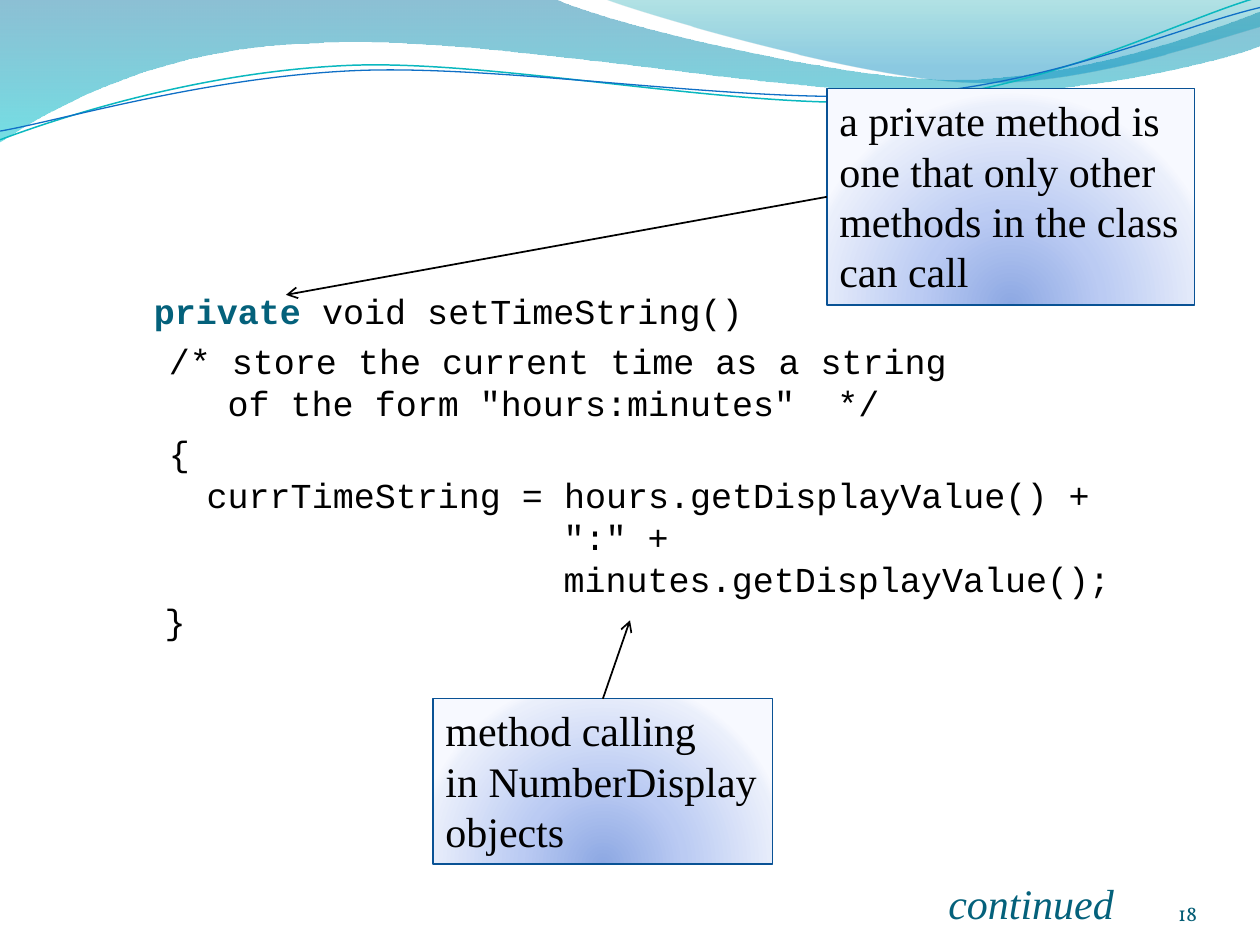
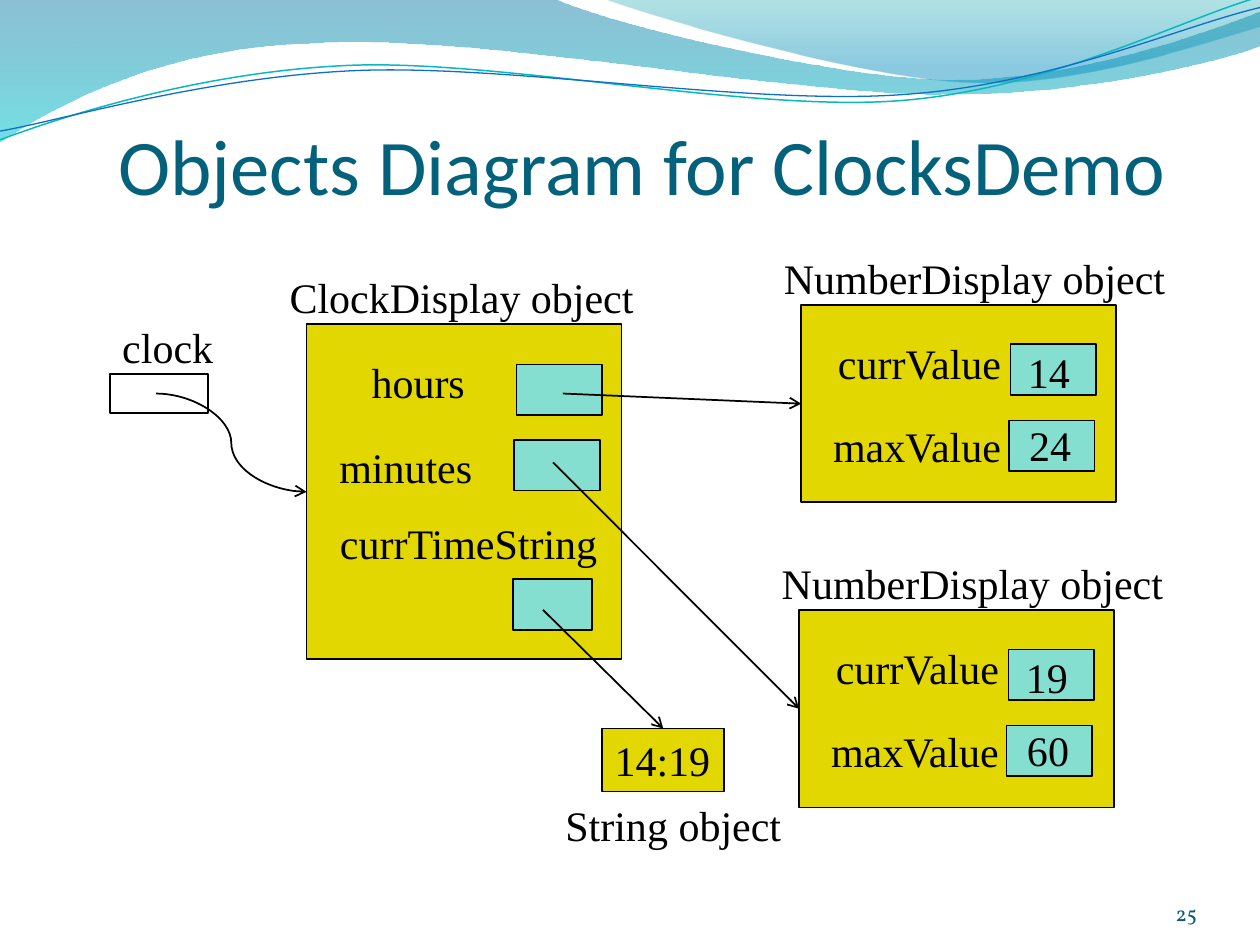
import dataclasses

import lxml.etree
import pptx
import pptx.dml.color
import pptx.enum.shapes
import pptx.enum.text
import pptx.oxml.ns
import pptx.util

Pt = pptx.util.Pt
qn = pptx.oxml.ns.qn
RECTANGLE = pptx.enum.shapes.MSO_SHAPE.RECTANGLE
CONNECTOR = pptx.enum.shapes.MSO_CONNECTOR
ANCHOR = pptx.enum.text.MSO_ANCHOR
ALIGN = pptx.enum.text.PP_ALIGN
TOP, LEFT = 0, 1


@dataclasses.dataclass(frozen=True)
class Theme:
    ink: str = "000000"
    accent: str = "04617B"
    number: str = "045D75"
    object_fill: str = "E2D700"
    field_fill: str = "85DFD0"
    callout_line: str = "095295"
    # gradient stops: position %, colour, opacity %
    callout_stops: tuple = ((0, "8DA8E3", 100), (43, "BBCBF3", 100),
                            (93, "EAEFFB", 100), (100, "F7F9FF", 100))
    wide_wave_stops: tuple = ((0, "0074A1", 45), (100, "00C6CF", 55))
    right_wave_stops: tuple = ((0, "00A1A9", 30), (80, "008BBF", 45))
    teal_line: str = "0AB8BF"
    blue_line: str = "0F6FC6"
    title_font: str = "Calibri"
    label_font: str = "Times New Roman"
    code_font: str = "Courier New"
    number_font: str = "Vollkorn"
    title_size: int = 45
    label_size: int = 24
    code_size: int = 20
    number_size: int = 12


THEME = Theme()
LABEL = {"name": THEME.label_font, "size": Pt(THEME.label_size)}
CODE = {"name": THEME.code_font, "size": Pt(THEME.code_size)}
TITLE = {"name": THEME.title_font, "size": Pt(THEME.title_size)}
NUMBER = {"name": THEME.number_font, "size": Pt(THEME.number_size)}

# Waves: a start point, then corners (x, y) and curves (two controls and an end).
WIDE_WAVE = [(0, 0), (316.8, -0.7), (342.7, 12.2, 478.1, 45.4, 545.8, 45.4),
             (614.2, 45.4, 689.8, 18.7, 720, 6.5), (720.7, 25.9),
             (707.8, 31.7, 626.4, 54.7, 537.1, 54),
             (447.8, 54, 275, 20.2, 185, 24.5),
             (92.9, 25.9, 33.1, 59.8, -0.7, 81.4)]
RIGHT_WAVE = [(344.9, -0.7), (366.5, 7.9, 491, 44.6, 553.7, 46.8),
              (616.3, 49.7, 691.9, 23, 720, 15.1), (720, 0)]
TEAL_WAVE = [(0, 79.9), (34.6, 67, 113.8, 41, 199.4, 37.4),
             (284.4, 33.8, 427, 64.1, 513.4, 57.6),
             (599.8, 51.1, 675.4, 10.8, 718.6, -1.4)]
BLUE_WAVE = [(0, 74.9), (33.8, 69.1, 118.1, 43.9, 203.8, 40.3),
             (290.2, 36.7, 429.8, 60.5, 516.2, 54),
             (601.9, 48.2, 673.9, 15.1, 720, 4.3)]


def rgb(colour):
    return pptx.dml.color.RGBColor.from_string(colour)


def set_values(target, values):
    for name, value in values.items():
        setattr(target, name, value)


def set_paint(shape, fill=None, line=None, width=1):
    shape.shadow.inherit = False
    if fill:
        shape.fill.solid()
        shape.fill.fore_color.rgb = rgb(fill)
    else:
        shape.fill.background()
    if line:
        shape.line.color.rgb = rgb(line)
        shape.line.width = Pt(width)
    else:
        shape.line.fill.background()


def set_gradient(shape, stops, radial=False):
    """Replace an empty fill by a downward or a radial gradient."""
    properties = shape._element.spPr
    gradient = lxml.etree.Element(qn("a:gradFill"), rotWithShape="1")
    stop_list = lxml.etree.SubElement(gradient, qn("a:gsLst"))
    for position, colour, opacity in stops:
        stop = lxml.etree.SubElement(stop_list, qn("a:gs"), pos=str(position * 1000))
        value = lxml.etree.SubElement(stop, qn("a:srgbClr"), val=colour)
        if opacity < 100:
            lxml.etree.SubElement(value, qn("a:alpha"), val=str(opacity * 1000))
    if radial:
        focus = lxml.etree.SubElement(gradient, qn("a:path"), path="circle")
        lxml.etree.SubElement(focus, qn("a:fillToRect"),
                              l="50000", t="130000", r="50000", b="-30000")
    else:
        lxml.etree.SubElement(gradient, qn("a:lin"), ang="5400000", scaled="0")
    properties.replace(properties.find(qn("a:noFill")), gradient)


def add_text(paragraph, text, font, colour=THEME.ink, **extra):
    """Add a run for each line of the text, with line breaks between."""
    for index, line in enumerate(text.split("\n")):
        if index:
            paragraph.add_line_break()
        run = paragraph.add_run()
        run.text = line
        set_values(run.font, {**font, **extra})
        run.font.color.rgb = rgb(colour)


def write_paragraphs(shape, texts, font=LABEL, colour=THEME.ink, align=ALIGN.LEFT,
                     frame_values=None, **extra):
    frame = shape.text_frame
    set_values(frame, {"word_wrap": False, "vertical_anchor": ANCHOR.TOP,
                       **(frame_values or {})})
    for index, text in enumerate(texts):
        paragraph = frame.add_paragraph() if index else frame.paragraphs[0]
        paragraph.alignment = align
        add_text(paragraph, text, font, colour, **extra)


def add_label(slide, left, top, width, text, height=36, **style):
    box = slide.shapes.add_textbox(Pt(left), Pt(top), Pt(width), Pt(height))
    write_paragraphs(box, [text], **style)


def add_box(slide, left, top, width, height, fill=None, line=THEME.ink, line_width=1):
    box = slide.shapes.add_shape(RECTANGLE, Pt(left), Pt(top), Pt(width), Pt(height))
    set_paint(box, fill, line, line_width)
    return box


def add_arrow(slide, start, end, kind=CONNECTOR.STRAIGHT):
    """Draw an arrow; each end is a point or a (shape, side) pair."""
    def is_point(target):
        return isinstance(target[0], (int, float))

    corners = [Pt(value) for target in (start, end)
               for value in (target if is_point(target) else (0, 0))]
    arrow = slide.shapes.add_connector(kind, *corners)
    if not is_point(start):
        arrow.begin_connect(*start)
    if not is_point(end):
        arrow.end_connect(*end)
    arrow.line.color.rgb = rgb(THEME.ink)
    arrow.line.width = Pt(1)
    properties = arrow._element.spPr
    lxml.etree.SubElement(properties.find(qn("a:ln")), qn("a:tailEnd"), type="arrow")
    lxml.etree.SubElement(properties, qn("a:effectLst"))


def bend_segments(shape, parts):
    """Turn the straight segments that have control points into Bézier curves."""
    segments = list(shape._element.iter(qn("a:lnTo")))
    for segment, part in zip(segments, parts):
        if len(part) == 2:
            continue
        curve = lxml.etree.Element(qn("a:cubicBezTo"))
        for x, y in zip(part[::2], part[1::2]):
            lxml.etree.SubElement(curve, qn("a:pt"), x=str(Pt(x) - shape.left),
                                  y=str(Pt(y) - shape.top))
        segment.getparent().replace(segment, curve)


def add_wave(slide, outline, stops=None, line=None, width=1):
    ends = [(Pt(part[-2]), Pt(part[-1])) for part in outline]
    builder = slide.shapes.build_freeform(*ends[0])
    builder.add_line_segments(ends[1:], close=bool(stops))
    wave = builder.convert_to_shape()
    bend_segments(wave, outline[1:])
    set_paint(wave, line=line, width=width)
    if stops:
        set_gradient(wave, stops)


def add_base_slide(presentation, number):
    """Add a slide with the wave band and the slide number."""
    slide = presentation.slides.add_slide(presentation.slide_layouts[6])
    add_wave(slide, WIDE_WAVE, THEME.wide_wave_stops)
    add_wave(slide, RIGHT_WAVE, THEME.right_wave_stops)
    add_wave(slide, TEAL_WAVE, line=THEME.teal_line, width=0.85)
    add_wave(slide, BLUE_WAVE, line=THEME.blue_line, width=0.75)
    margins = dict.fromkeys(
        ("margin_left", "margin_top", "margin_right", "margin_bottom"), 0)
    add_label(slide, 624, 500.2, 60, str(number), 28.8, font=NUMBER,
              colour=THEME.number, align=ALIGN.RIGHT,
              frame_values={**margins, "word_wrap": True,
                            "vertical_anchor": ANCHOR.BOTTOM})
    return slide


def add_code(slide, left, top, width, height):
    # left margin, first line indent, space before, text
    lines = [(15.4, 0, 0, "void setTimeString()"),
             (57.6, -33.6, 4.5, "/* store the current time as a string\n"
                                'of the form "hours:minutes"  */'),
             (24, 0, 4.5, "{"),
             (45.6, 0, 0, "currTimeString = hours.getDisplayValue() +"),
             (249.6, 0, 0, '":" +\nminutes.getDisplayValue();'),
             (21.6, 0, 0, "}")]
    frame = slide.shapes.add_textbox(Pt(left), Pt(top), Pt(width), Pt(height)).text_frame
    set_values(frame, {"word_wrap": True, "margin_top": Pt(9.3)})
    for index, (margin, indent, space, text) in enumerate(lines):
        paragraph = frame.add_paragraph() if index else frame.paragraphs[0]
        set_values(paragraph, {"space_before": Pt(space), "line_spacing": Pt(24)})
        properties = paragraph._p.get_or_add_pPr()
        properties.set("marL", str(Pt(margin)))
        properties.set("indent", str(Pt(indent)))
        if index == 0:
            add_text(paragraph, "private ", CODE, THEME.accent, bold=True)
        add_text(paragraph, text, CODE)


def add_callout(slide, left, top, width, height, texts, side, target):
    callout = add_box(slide, left, top, width, height,
                      line=THEME.callout_line, line_width=0.75)
    set_gradient(callout, THEME.callout_stops, radial=True)
    write_paragraphs(callout, texts)
    add_arrow(slide, (callout, side), target)


def add_object(slide, left, top, width, height, caption, fields):
    """Draw a captioned object; fields hold (kind, x, y, width, text) from its corner."""
    box = add_box(slide, left, top, width, height, THEME.object_fill)
    caption_text, caption_x, caption_width = caption
    add_label(slide, left + caption_x, top - 33.5, caption_width, caption_text)
    for kind, x, y, field_width, text in fields:
        if kind == "cell":
            add_box(slide, left + x, top + y, field_width, 28.8, THEME.field_fill)
        else:
            add_label(slide, left + x, top + y, field_width, text)
    return box


def add_number_display(slide, left, top, current, maximum):
    fields = [("label", 13.9, 15.1, 108.7, "currValue"),
              ("label", 11.2, 62.6, 111, "maxValue"),
              ("cell", 119.7, 22.5, 49, None),
              ("cell", 118.6, 66, 49, None),
              ("label", 122.5, 20.2, 38.9, current),
              ("label", 123.2, 61.9, 38.9, maximum)]
    return add_object(slide, left, top, 180, 112.8,
                      ("NumberDisplay object", -17, 234), fields)


def add_clock_display(slide, left, top):
    fields = [("label", 30, 14.9, 68.4, "hours"),
              ("label", 11.6, 63.2, 90.7, "minutes"),
              ("label", 12, 107.1, 168.5, "currTimeString"),
              ("cell", 120, 23, 49, None),
              ("cell", 118.7, 66.2, 49, None),
              ("cell", 118.1, 145.8, 44.9, None)]
    return add_object(slide, left, top, 180, 191.5,
                      ("ClockDisplay object", -16.8, 212.4), fields)


def build_code_slide(presentation):
    slide = add_base_slide(presentation, 18)
    add_code(slide, 65.4, 156.2, 637.2, 324)
    add_callout(slide, 472.5, 50.6, 210.2, 123.8,
                ["a private method is", "one that only other",
                 "methods in the class\ncan call"], LEFT, (163.4, 168.5))
    add_callout(slide, 247.4, 399.3, 194.2, 94.5,
                ["method calling", "in NumberDisplay", "objects"], TOP, (360, 354.5))
    add_label(slide, 534.8, 498.2, 109.4, "continued", colour=THEME.accent, italic=True)


def build_diagram_slide(presentation):
    slide = add_base_slide(presentation, 25)
    add_label(slide, 67.7, 33.8, 630, "Objects Diagram for ClocksDemo", 87.1,
              font=TITLE, colour=THEME.accent,
              frame_values={"word_wrap": True, "vertical_anchor": ANCHOR.BOTTOM,
                            "margin_left": 0, "margin_right": 0, "margin_bottom": 0})
    clock_left, clock_top = 175.2, 185.3
    clock_display = add_clock_display(slide, clock_left, clock_top)
    hours = add_number_display(slide, 457.8, 174.3, "14", "24")
    minutes = add_number_display(slide, 456.6, 348.6, "19", "60")
    time_string = add_box(slide, 344.1, 416.3, 69.8, 36, THEME.object_fill)
    write_paragraphs(time_string, ["14:19"],
                     frame_values={"vertical_anchor": ANCHOR.MIDDLE})
    add_label(slide, 316, 453.6, 139, "String object")

    add_label(slide, 62.8, 180.4, 67, "clock")
    add_box(slide, 62.8, 213.9, 56.2, 22.3)
    add_arrow(slide, (89.2, 224.9), (clock_display, LEFT), CONNECTOR.CURVE)
    for x, y, target in ((146.5, 39.6, (hours, LEFT)),
                         (140.8, 78.9, (minutes, LEFT)),
                         (135.1, 163.2, (time_string, TOP))):
        add_arrow(slide, (clock_left + x, clock_top + y), target)


def main():
    presentation = pptx.Presentation()
    set_values(presentation, {"slide_width": Pt(720), "slide_height": Pt(540)})
    build_code_slide(presentation)
    build_diagram_slide(presentation)
    presentation.save("out.pptx")


if __name__ == "__main__":
    main()
